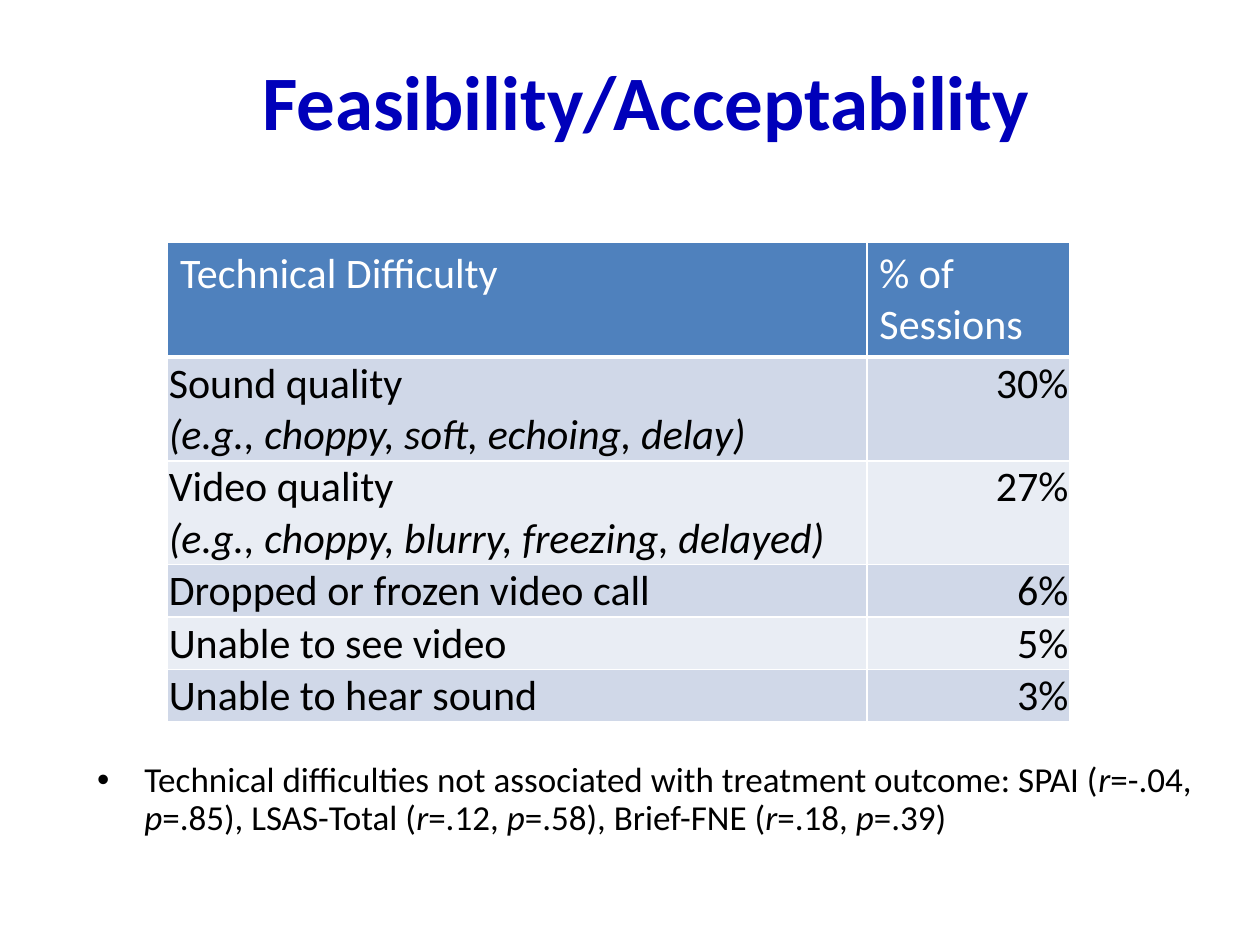
"""Build a slide on feasibility and acceptability with a table of technical difficulties."""
from lxml import etree
from pptx import Presentation
from pptx import util as u
from pptx.dml.color import RGBColor
from pptx.enum import text
from pptx.oxml import ns


def write(frame, content, size=24, color="000000", bold=False, align=text.PP_ALIGN.LEFT):
    """Write one paragraph; *asterisks* mark italics and newlines become line breaks."""
    paragraph = frame.paragraphs[0]
    paragraph.alignment = align
    for index, part in enumerate(content.split("*")):
        for line_number, line in enumerate(part.split("\n")):
            if line_number:
                paragraph.add_line_break()
            if line:
                run = paragraph.add_run()
                run.text = line
                run.font.name = "Calibri"
                run.font.size = u.Pt(size)
                run.font.bold = bold
                run.font.italic = index % 2 == 1
                run.font.color.rgb = RGBColor.from_string(color)
    return paragraph


def border(cell, side, width):
    """Draw a white border on one side of a cell."""
    line = etree.SubElement(cell._tc.get_or_add_tcPr(), ns.qn(f"a:ln{side}"), w=str(u.Pt(width)))
    fill = etree.SubElement(line, ns.qn("a:solidFill"))
    etree.SubElement(fill, ns.qn("a:srgbClr"), val="FFFFFF")


deck = Presentation()
deck.slide_width, deck.slide_height = u.Inches(10), u.Inches(7.5)
slide = deck.slides.add_slide(deck.slide_layouts[1])

heading, finding = slide.placeholders
for placeholder, top, height in ((heading, 0.25, 1.08), (finding, 6, 1.5)):
    placeholder.left, placeholder.top = u.Inches(0.67), u.Inches(top)
    placeholder.width, placeholder.height = u.Inches(8.92), u.Inches(height)
    placeholder.text_frame.auto_size = text.MSO_AUTO_SIZE.NONE

heading.text_frame.vertical_anchor = text.MSO_ANCHOR.MIDDLE
write(heading.text_frame, "Feasibility/Acceptability", size=44, color="0000BA", bold=True,
      align=text.PP_ALIGN.CENTER)
outcome = write(
    finding.text_frame,
    "Technical difficulties not associated with treatment outcome: SPAI (*r*=-.04, *p*=.85), "
    "LSAS-Total (*r*=.12, *p*=.58), Brief-FNE (*r*=.18, *p*=.39)",
    size=20)
outcome.line_spacing = 0.9

difficulties = [
    ("Technical Difficulty", "% of Sessions", 0.9),
    ("Sound quality\n*(e.g., choppy, soft, echoing, delay)*", "30%", 0.81),
    ("Video quality\n*(e.g., choppy, blurry, freezing, delayed)*", "27%", 0.81),
    ("Dropped or frozen video call", "6%", 0.41),
    ("Unable to see video", "5%", 0.41),
    ("Unable to hear sound", "3%", 0.41),
]
table = slide.shapes.add_table(len(difficulties), 2, u.Inches(1.33), u.Inches(1.92),
                               u.Inches(7.16), u.Inches(3.75)).table
for column, width in zip(table.columns, (5.55, 1.61)):
    column.width = u.Inches(width)

for row, (difficulty, share, height) in enumerate(difficulties):
    table.rows[row].height = u.Inches(height)
    header = row == 0
    fill_color = "4F81BD" if header else ("E9EDF4", "D0D8E8")[row % 2]
    side_margin, top_margin, bottom_margin = (0.1, 0.05, 0.05) if header else (0.01, 0.01, 0)
    for column, content in enumerate((difficulty, share)):
        cell = table.cell(row, column)
        cell.margin_left = cell.margin_right = u.Inches(side_margin)
        cell.margin_top, cell.margin_bottom = u.Inches(top_margin), u.Inches(bottom_margin)
        for side in "LRTB":
            border(cell, side, 3 if header and side == "B" else 1)
        cell.fill.solid()
        cell.fill.fore_color.rgb = RGBColor.from_string(fill_color)
        write(cell.text_frame, content, color="FFFFFF" if header else "000000",
              align=text.PP_ALIGN.RIGHT if column and not header else text.PP_ALIGN.LEFT)

deck.save("out.pptx")
